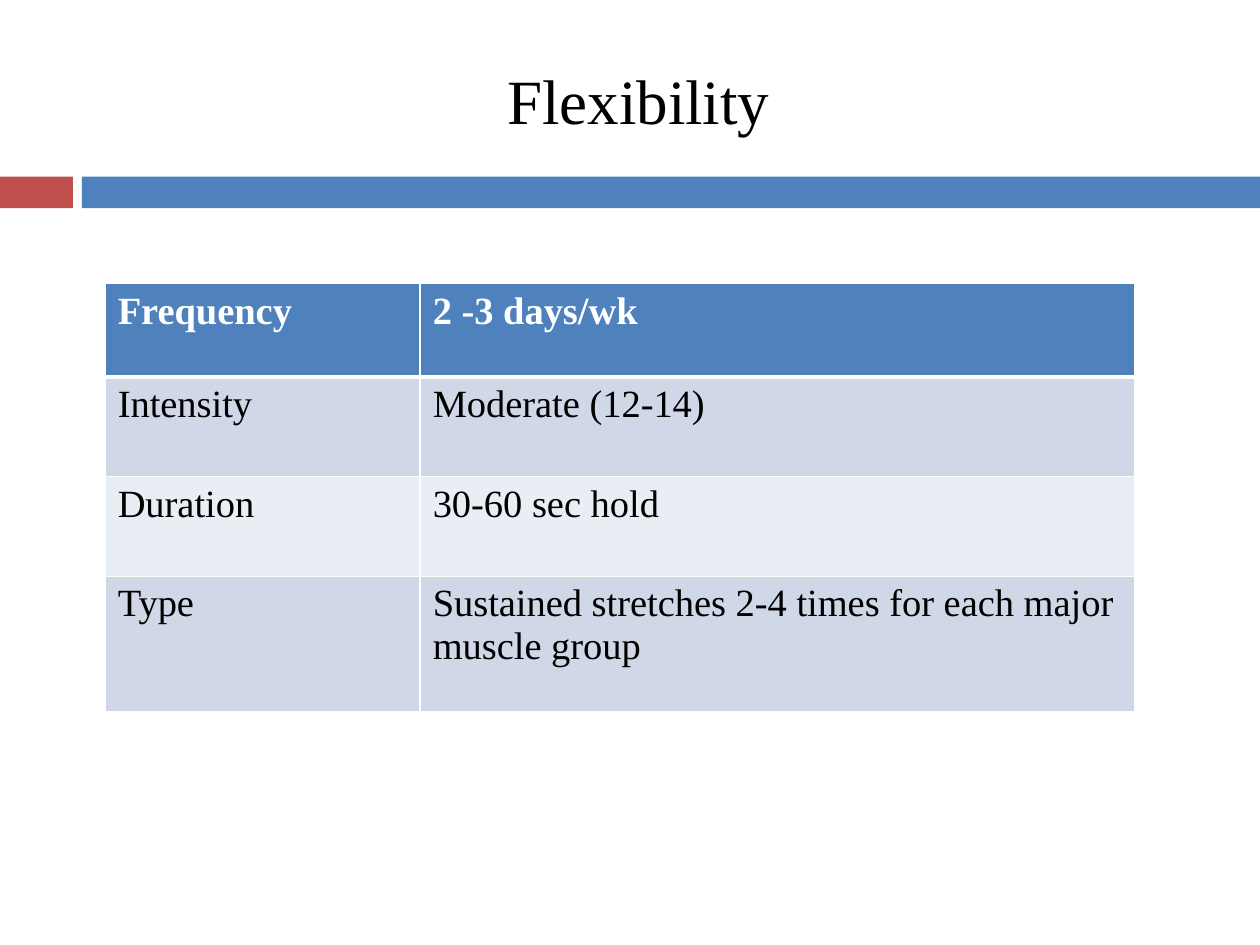
from lxml import etree
from pptx import Presentation
from pptx.dml.color import RGBColor
from pptx.enum.shapes import MSO_SHAPE
from pptx.enum.text import MSO_ANCHOR, PP_ALIGN
from pptx.oxml.ns import qn
from pptx.util import Cm, Pt

RECTANGLE = MSO_SHAPE.RECTANGLE
MIDDLE = MSO_ANCHOR.MIDDLE
CENTER = PP_ALIGN.CENTER

RED = RGBColor(0xC0, 0x50, 0x4D)
BLUE = RGBColor(0x4F, 0x81, 0xBD)
BAND_DARK = RGBColor(0xD0, 0xD8, 0xE8)
BAND_LIGHT = RGBColor(0xE9, 0xED, 0xF4)
WHITE = RGBColor(0xFF, 0xFF, 0xFF)
BLACK = RGBColor(0, 0, 0)

# Content
TITLE = "Flexibility "
TABLE_ROWS = [
    ("Frequency", "2 -3 days/wk"),
    ("Intensity", "Moderate (12-14)"),
    ("Duration", "30-60 sec hold"),
    ("Type", "Sustained stretches 2-4 times for each major muscle group"),
]
COLUMN_WIDTHS = [6.35, 14.4]
ROW_HEIGHTS = [1.88, 2.01, 2.01, 2.72]
BARS = [(0, 1.47, RED), (1.65, 23.75, BLUE)]  # left, width, colour

# Formats
FONT_NAME = "Times New Roman"
TITLE_FONT = {"name": FONT_NAME, "size": Pt(36)}
HEADER_FONT = {"name": FONT_NAME, "size": Pt(22), "bold": True}
BODY_FONT = {"name": FONT_NAME, "size": Pt(22), "bold": False}


def write_text(text_frame, text, font_format, color):
    paragraph = text_frame.paragraphs[0]
    run = paragraph.add_run()
    run.text = text
    for name, value in font_format.items():
        setattr(run.font, name, value)
    run.font.color.rgb = color
    return paragraph


def set_borders(cell, widths):
    """Draw white borders; they must stand before the fill in the cell."""
    properties = cell._tc.get_or_add_tcPr()
    for position, (side, width) in enumerate(widths.items()):
        line = etree.Element(qn(f"a:{side}"), w=str(Pt(width)))
        fill = etree.SubElement(line, qn("a:solidFill"))
        etree.SubElement(fill, qn("a:srgbClr"), val=str(WHITE))
        properties.insert(position, line)


presentation = Presentation()
presentation.slide_width = Cm(25.4)
presentation.slide_height = Cm(19.05)
slide = presentation.slides.add_slide(presentation.slide_layouts[6])

# Bars under the title
for left, width, color in BARS:
    bar = slide.shapes.add_shape(RECTANGLE, Cm(left), Cm(3.56), Cm(width), Cm(0.64))
    bar.shadow.inherit = False
    bar.fill.solid()
    bar.fill.fore_color.rgb = color
    bar.line.fill.background()

# Title
title_box = slide.shapes.add_textbox(Cm(1.7), Cm(0.64), Cm(22.66), Cm(2.74))
title_box.text_frame.word_wrap = True
title_box.text_frame.vertical_anchor = MIDDLE
write_text(title_box.text_frame, TITLE, TITLE_FONT, BLACK).alignment = CENTER

# Table
table = slide.shapes.add_table(
    len(TABLE_ROWS), len(COLUMN_WIDTHS), Cm(2.12), Cm(5.72),
    Cm(sum(COLUMN_WIDTHS)), Cm(sum(ROW_HEIGHTS)),
).table
for column, width in zip(table.columns, COLUMN_WIDTHS):
    column.width = Cm(width)
for row, height in zip(table.rows, ROW_HEIGHTS):
    row.height = Cm(height)

for row_index, texts in enumerate(TABLE_ROWS):
    is_header = row_index == 0
    band = BAND_DARK if row_index % 2 else BAND_LIGHT
    for column_index, text in enumerate(texts):
        cell = table.cell(row_index, column_index)
        cell.fill.solid()
        cell.fill.fore_color.rgb = BLUE if is_header else band
        top = 3 if row_index == 1 else 1
        bottom = 3 if is_header else 1
        set_borders(cell, {"lnL": 1, "lnR": 1, "lnT": top, "lnB": bottom})
        write_text(cell.text_frame, text,
                   HEADER_FONT if is_header else BODY_FONT,
                   WHITE if is_header else BLACK)

presentation.save("out.pptx")
